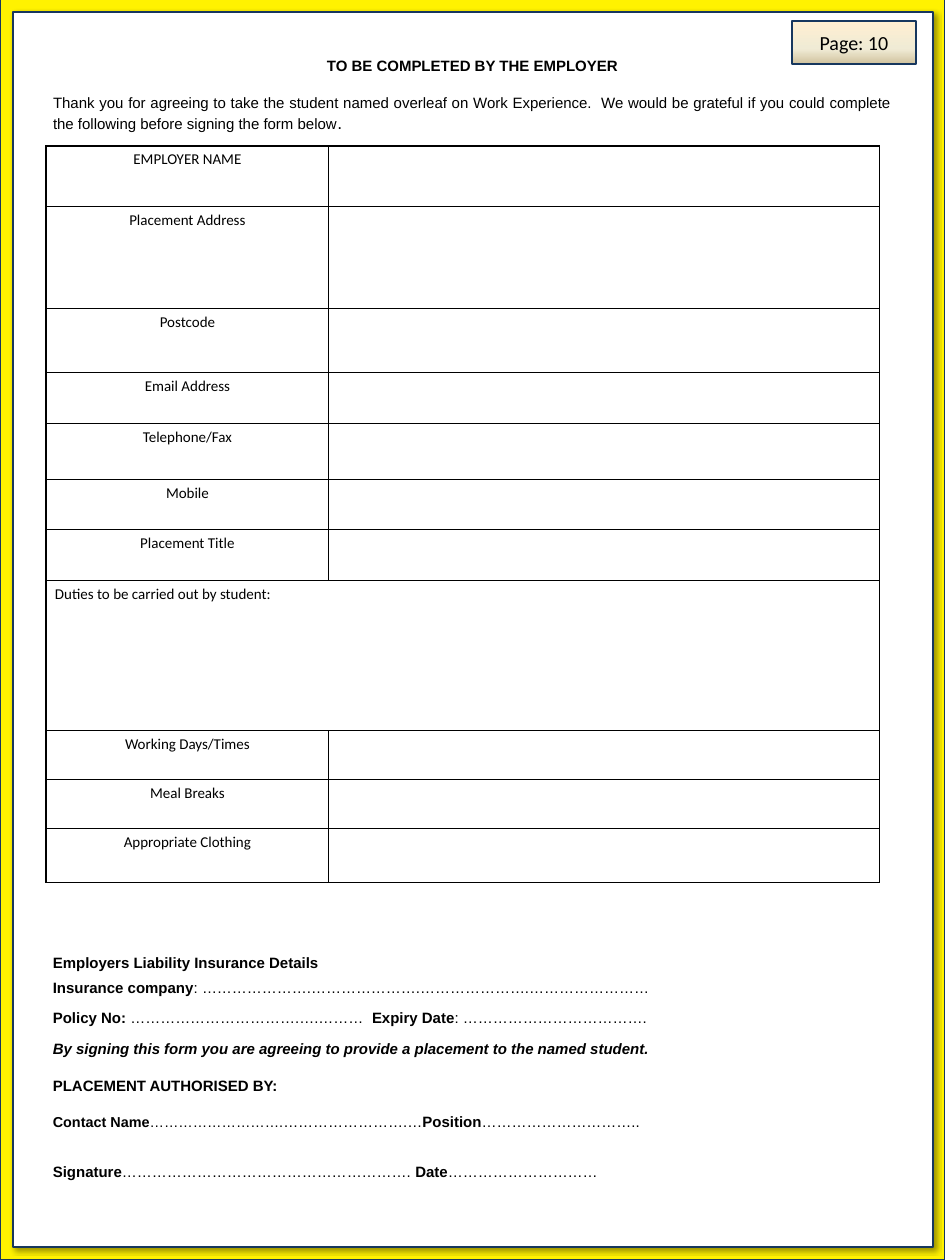
import pptx
import pptx.util
import pptx.dml.color
import pptx.enum.shapes
import pptx.enum.text
import pptx.oxml.ns
from lxml import etree

PX = 10160  # EMU per px, 90 px to the inch
NAVY, YELLOW, WHITE, BLACK = "17375E", "FFF200", "FFFFFF", "000000"
ALIGN = pptx.enum.text.PP_ALIGN

# Content
TITLE = "TO BE COMPLETED BY THE EMPLOYER"
INTRO = [("Thank you for agreeing to take the student named overleaf on Work "
          "Experience.  We would be grateful if you could complete the following "
          "before signing the form below", "", 12), (".", "", 14)]
BADGE = "Page: 10"
BADGE_STOPS = [(0, "FFEFD1"), (65, "F0EBD5"), (100, "D1C39F")]
ROWS = [  # label, height
    ("EMPLOYER NAME", 61), ("Placement Address", 102), ("Postcode", 64),
    ("Email Address", 51), ("Telephone/Fax", 56), ("Mobile", 50),
    ("Placement Title", 51), ("Duties to be carried out by student:", 150),
    ("Working Days/Times", 49), ("Meal Breaks", 49), ("Appropriate Clothing", 54),
]
FULL_WIDTH_ROW = 7
COLS = [283, 551]
SIGN_OFF = [  # space before in points, runs of (text, style, size)
    (0, [("Employers Liability Insurance Details", "b", 12)]),
    (5.4, [("Insurance company", "b", 12),
           (": ………………….………………….………………….……………………", "", 12)]),
    (10.2, [("Policy No:", "b", 12), (" …………………………….….………  ", "", 12),
            ("Expiry Date", "b", 12), (": ……………………………….", "", 12)]),
    (10.2, [("By signing this form you are agreeing to provide a placement to "
             "the named student.", "bi", 12)]),
    (15, [("PLACEMENT AUTHORISED BY:", "b", 12)]),
    (14.2, [("Contact Name", "b", 11.5), ("……………………….", "", 11.5),
            ("…………………….…", "", 12), ("Position", "b", 12),
            ("…………………………..", "", 12)]),
    (26.2, [("Signature", "b", 12), ("…………………………………………………. ", "", 12),
            ("Date", "b", 12), ("…………………………", "", 12)]),
]


def rgb(value):
    return pptx.dml.color.RGBColor.from_string(value)


def add_xml(parent, tag, **attrs):
    element = etree.SubElement(parent, pptx.oxml.ns.qn("a:" + tag))
    for name, value in attrs.items():
        element.set(name, str(value))
    return element


def place(shape, *box):
    shape.left, shape.top, shape.width, shape.height = [v * PX for v in box]


def style(r, size, font="Arial", marks=""):
    r.font.name, r.font.size = font, pptx.util.Pt(size)
    r.font.bold, r.font.italic = "b" in marks, "i" in marks
    r.font.color.rgb = rgb(BLACK)


def write(p, runs, align=ALIGN.LEFT, before=0):
    p.alignment, p.space_before = align, pptx.util.Pt(before)
    for text, marks, size in runs:
        r = p.add_run()
        r.text = text
        style(r, size, marks=marks)


def frame(shape):
    tf = shape.text_frame
    tf.word_wrap = True
    tf.auto_size = pptx.enum.text.MSO_AUTO_SIZE.NONE
    tf.vertical_anchor = pptx.enum.text.MSO_ANCHOR.TOP
    return tf


def add_panel(s, box, fill, width, stops=()):
    x, y, w, h = [v * PX for v in box]
    sp = s.shapes.add_shape(pptx.enum.shapes.MSO_SHAPE.RECTANGLE, x, y, w, h)
    if stops:
        grad = add_xml(sp._element.spPr, "gradFill", rotWithShape=1)
        gs_list = add_xml(grad, "gsLst")
        for pos, color in stops:
            add_xml(add_xml(gs_list, "gs", pos=pos * 1000), "srgbClr", val=color)
        add_xml(grad, "lin", ang=5400000, scaled=0)
    else:
        sp.fill.solid()
        sp.fill.fore_color.rgb = rgb(fill)
    sp.line.color.rgb = rgb(NAVY)
    sp.line.width = pptx.util.Pt(width)
    sp.shadow.inherit = False
    return sp


def add_shadow(sp):
    effects = sp._element.spPr.find(pptx.oxml.ns.qn("a:effectLst"))
    shadow = add_xml(effects, "outerShdw", blurRad=50800, dist=38100,
                     dir=2700000, algn="tl", rotWithShape=0)
    add_xml(add_xml(shadow, "srgbClr", val=BLACK), "alpha", val=40000)


def add_borders(cell):
    tc_pr = cell._tc.get_or_add_tcPr()
    for side in ("lnL", "lnR", "lnT", "lnB"):
        ln = add_xml(tc_pr, side, w=12700)
        add_xml(add_xml(ln, "solidFill"), "srgbClr", val=BLACK)


prs = pptx.Presentation()
prs.slide_width, prs.slide_height = 945 * PX, 1260 * PX
s = prs.slides.add_slide(prs.slide_layouts[1])
title, intro = s.shapes.title, s.placeholders[1]

# Page frame
add_panel(s, (0, -1, 945, 1261), YELLOW, 2.25)
add_shadow(add_panel(s, (13, 12, 920, 1235), WHITE, 2.25))

# Page number badge
badge = add_panel(s, (792, 21, 124, 43), None, 1.5, BADGE_STOPS)
badge.text_frame.text = BADGE
badge.text_frame.vertical_anchor = pptx.enum.text.MSO_ANCHOR.MIDDLE
p = badge.text_frame.paragraphs[0]
p.alignment = ALIGN.CENTER
style(p.runs[0], 16, "Calibri")

# Heading and introduction, brought in front of the page frame
for holder, box in ((title, (44, 52, 857, 28)), (intro, (44, 89, 857, 50))):
    place(holder, *box)
    s.shapes._spTree.append(holder._element)
write(frame(title).paragraphs[0], [(TITLE, "b", 12)], ALIGN.CENTER)
p = frame(intro).paragraphs[0]
write(p, INTRO, ALIGN.JUSTIFY)
p_pr = p._p.get_or_add_pPr()
p_pr.set("marL", "0")
p_pr.set("indent", "0")
add_xml(p_pr, "buNone")

# Placement details table
table = s.shapes.add_table(len(ROWS), len(COLS), 46 * PX, 146 * PX, sum(COLS) * PX,
                           sum(h for _, h in ROWS) * PX).table
table.first_row = table.horz_banding = False
for column, width in zip(table.columns, COLS):
    column.width = width * PX
for i, (label, height) in enumerate(ROWS):
    table.rows[i].height = height * PX
    for cell in table.rows[i].cells:
        add_borders(cell)
        cell.fill.background()
    cell = table.cell(i, 0)
    cell.text_frame.text = label
    p = cell.text_frame.paragraphs[0]
    p.alignment = ALIGN.LEFT if i == FULL_WIDTH_ROW else ALIGN.CENTER
    style(p.runs[0], 12, "Calibri")
table.cell(FULL_WIDTH_ROW, 0).merge(table.cell(FULL_WIDTH_ROW, 1))

# Insurance and signatures
tf = frame(s.shapes.add_textbox(44 * PX, 949 * PX, 857 * PX, 246 * PX))
for i, (before, runs) in enumerate(SIGN_OFF):
    write(tf.add_paragraph() if i else tf.paragraphs[0], runs, before=before)

prs.save("out.pptx")
